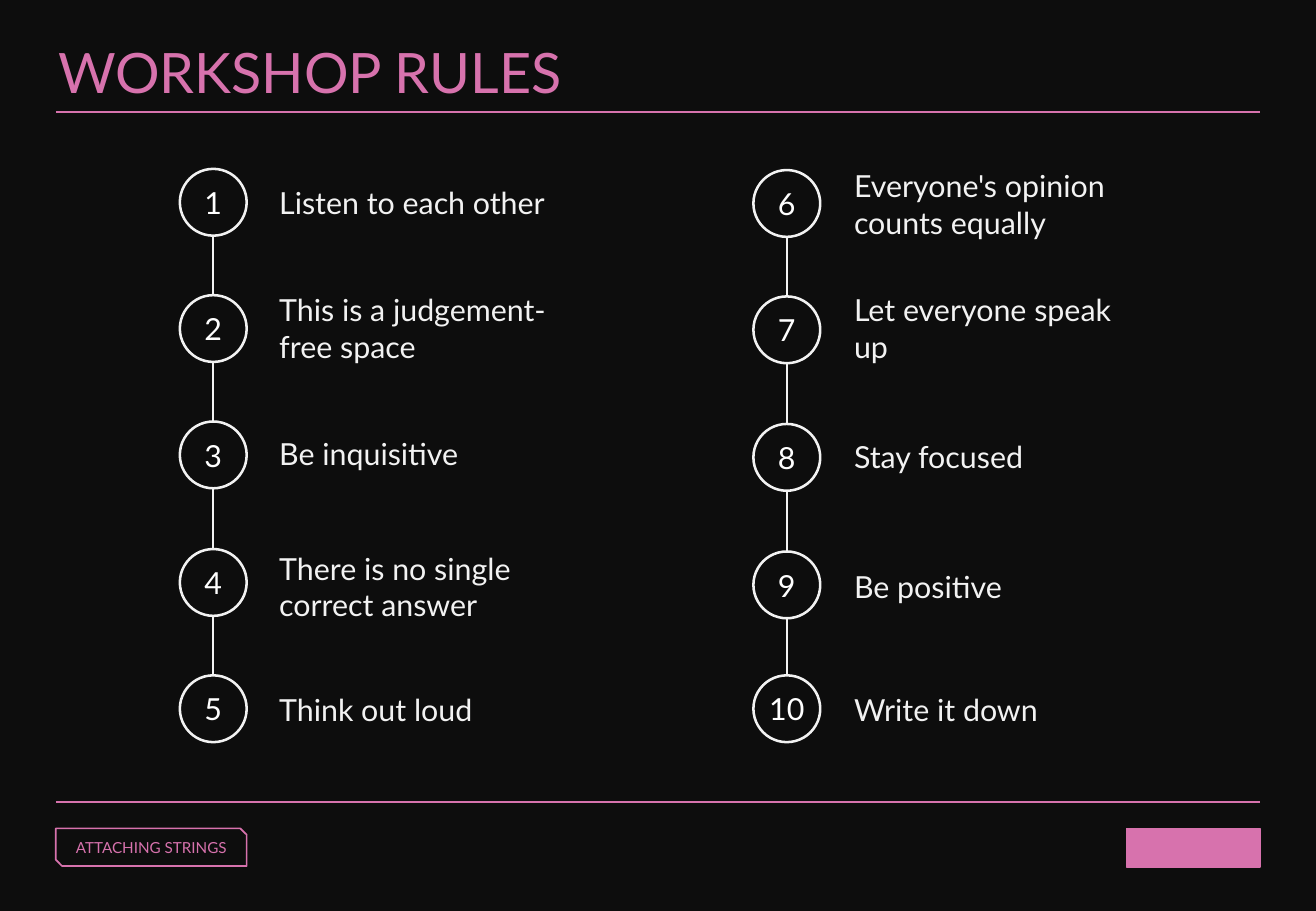
import pptx
import pptx.dml.color
import pptx.enum.shapes
import pptx.enum.text
import pptx.oxml.ns
import pptx.util
from pptx.util import Inches, Pt
from lxml import etree

COLORS = {"dark": "0D0D0D", "pink": "D772AD", "light": "F2F2F2", "white": "FFFFFF"}
FONT = "Lato"
CIRCLE = 0.55
LEFT_EDGE, RIGHT_EDGE = 0.46, 10.37

# Each rule: circle top, text top, text
COLUMNS = [
    {"circle_x": 1.48, "text_x": 2.2, "text_w": 2.67, "first": 1, "rules": [
        (1.39, 1.47, "Listen to each other"),
        (2.43, 2.35, "This is a judgement-free space"),
        (3.47, 3.53, "Be inquisitive"),
        (4.52, 4.48, "There is no single correct answer"),
        (5.56, 5.64, "Think out loud"),
    ]},
    {"circle_x": 6.2, "text_x": 6.93, "text_w": 2.43, "first": 6, "rules": [
        (1.4, 1.33, "Everyone's opinion counts equally"),
        (2.44, 2.35, "Let everyone speak up"),
        (3.49, 3.56, "Stay focused"),
        (4.54, 4.63, "Be positive"),
        (5.56, 5.64, "Write it down"),
    ]},
]


def rgb(name):
    return pptx.dml.color.RGBColor.from_string(COLORS[name])


def add_run(p, text, size, color):
    r = p.add_run()
    r.text = text
    r.font.name = FONT
    r.font.size = Pt(size)
    r.font.color.rgb = rgb(color)


def add_text(s, x, y, w, h, text, size, color):
    tf = s.shapes.add_textbox(Inches(x), Inches(y), Inches(w), Inches(h)).text_frame
    tf.word_wrap = True
    tf.auto_size = pptx.enum.text.MSO_AUTO_SIZE.SHAPE_TO_FIT_TEXT
    add_run(tf.paragraphs[0], text, size, color)


def add_shape(s, kind, x, y, w, h, line, width, fill=None):
    sp = s.shapes.add_shape(kind, Inches(x), Inches(y), Inches(w), Inches(h))
    sp.shadow.inherit = False
    if fill:
        sp.fill.solid()
        sp.fill.fore_color.rgb = rgb(fill)
    else:
        sp.fill.background()
    sp.line.color.rgb = rgb(line)
    sp.line.width = Pt(width)
    return sp


def add_label(sp, text, size, color, anchor):
    """Write centred text inside a shape."""
    tf = sp.text_frame
    tf.word_wrap = True
    tf.margin_left = tf.margin_right = 0
    tf.vertical_anchor = anchor
    p = tf.paragraphs[0]
    p.alignment = pptx.enum.text.PP_ALIGN.CENTER
    add_run(p, text, size, color)


def add_line(s, x1, y1, x2, y2, color):
    line = s.shapes.add_connector(pptx.enum.shapes.MSO_CONNECTOR.STRAIGHT,
                                  Inches(x1), Inches(y1), Inches(x2), Inches(y2))
    line.line.color.rgb = rgb(color)
    line.line.width = Pt(1)
    etree.SubElement(line._element.spPr, pptx.oxml.ns.qn("a:effectLst"))


def add_rule_column(s, circle_x, text_x, text_w, first, rules):
    """Draw numbered circles joined by lines, with a rule beside each."""
    center_x = circle_x + CIRCLE / 2
    previous_bottom = None
    for number, (top, text_top, text) in enumerate(rules, first):
        if previous_bottom is not None:
            add_line(s, center_x, previous_bottom, center_x, top, "light")
        circle = add_shape(s, pptx.enum.shapes.MSO_SHAPE.OVAL,
                           circle_x, top, CIRCLE, CIRCLE, "light", 1.5)
        add_label(circle, str(number), 18, "white", pptx.enum.text.MSO_ANCHOR.MIDDLE)
        text_h = 0.71 if len(text) > 20 else 0.4
        add_text(s, text_x, text_top, text_w, text_h, text, 18, "light")
        previous_bottom = top + CIRCLE


def main():
    prs = pptx.Presentation()
    prs.slide_width, prs.slide_height = Inches(10.83), Inches(7.5)
    s = prs.slides.add_slide(prs.slide_layouts[6])
    s.background.fill.solid()
    s.background.fill.fore_color.rgb = rgb("dark")

    add_text(s, 0.38, 0.26, 10, 0.66, "WORKSHOP RULES", 33, "pink")
    for y in (0.92, 6.6):
        add_line(s, LEFT_EDGE, y, RIGHT_EDGE, y, "pink")

    for column in COLUMNS:
        add_rule_column(s, **column)

    shapes = pptx.enum.shapes.MSO_SHAPE
    tag = add_shape(s, shapes.SNIP_2_DIAG_RECTANGLE, LEFT_EDGE, 6.82, 1.57, 0.31, "pink", 1)
    add_label(tag, "ATTACHING STRINGS", 9, "pink", pptx.enum.text.MSO_ANCHOR.BOTTOM)
    add_shape(s, shapes.RECTANGLE, 9.27, 6.82, 1.1, 0.32, "pink", 1, fill="pink")

    prs.save("out.pptx")


if __name__ == "__main__":
    main()
